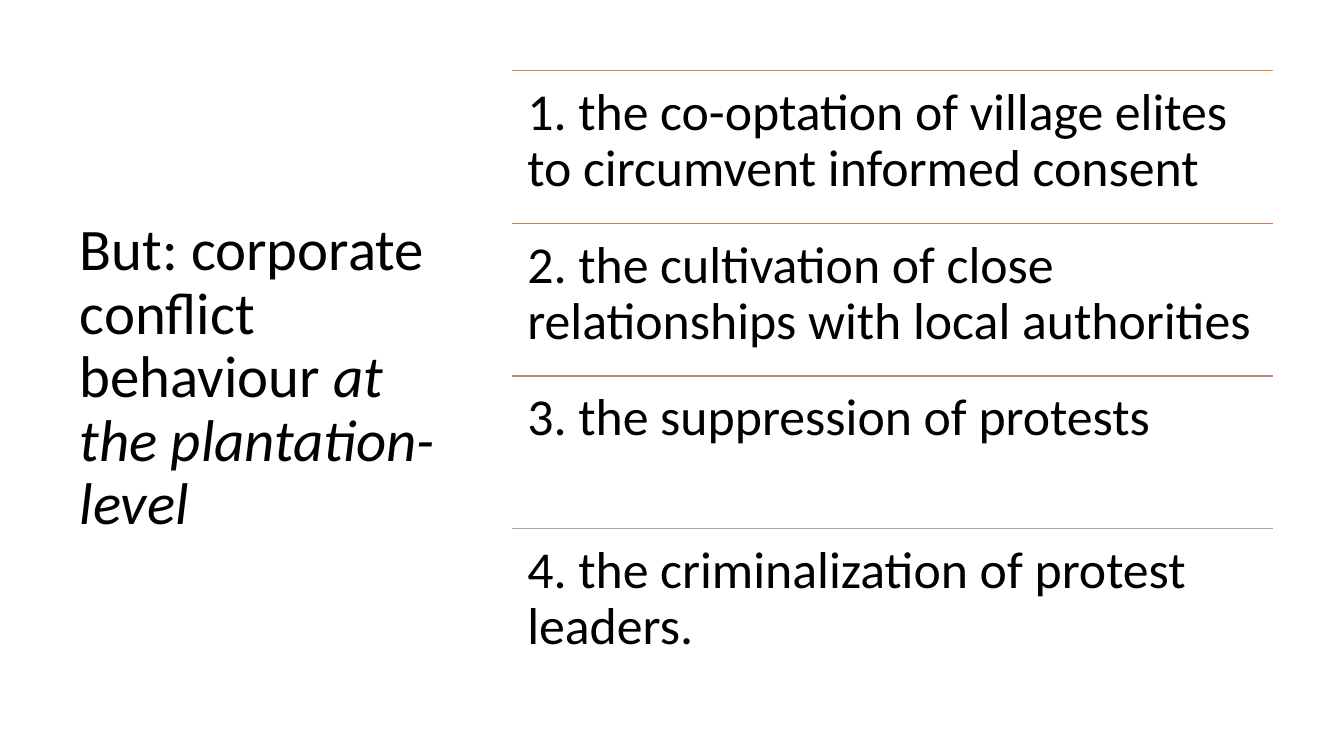
from lxml.etree import SubElement
from pptx import Presentation
from pptx.dml.color import RGBColor
from pptx.enum.shapes import MSO_CONNECTOR
from pptx.enum.text import MSO_ANCHOR, MSO_AUTO_SIZE, PP_ALIGN
from pptx.oxml.ns import qn
from pptx.util import Inches, Pt

COLORS = {
    "text": "000000",
    "orange": "ED7D31",
    "rust": "D07A5B",
    "rose": "B88881",
    "gray": "A4A4A4",
}

ITEMS = [
    ("1. the co-optation of village elites to circumvent informed consent", "orange"),
    ("2. the cultivation of close relationships with local authorities", "rust"),
    ("3. the suppression of protests", "rose"),
    ("4. the criminalization of protest leaders.", "gray"),
]


def add_run(para, text, size, color="text", font="Calibri", italic=False):
    run = para.add_run()
    run.text = text
    run.font.name = font
    run.font.size = Pt(size)
    run.font.italic = italic
    run.font.color.rgb = RGBColor.from_string(COLORS[color])


class Deck:
    """Holds the style and the current slide."""

    title_size = 42
    item_size = 37
    spacing = 0.9

    def __init__(self):
        self.prs = Presentation()
        self.prs.slide_width = Inches(13.33)
        self.prs.slide_height = Inches(7.5)
        self.slide = self.prs.slides.add_slide(self.prs.slide_layouts[5])

    def frame(self, shape, anchor, pad_x, pad_y):
        frame = shape.text_frame
        frame.word_wrap = True
        frame.auto_size = MSO_AUTO_SIZE.NONE
        frame.vertical_anchor = anchor
        frame.margin_left = frame.margin_right = Inches(pad_x)
        frame.margin_top = frame.margin_bottom = Inches(pad_y)
        para = frame.paragraphs[0]
        para.alignment = PP_ALIGN.LEFT
        para.line_spacing = self.spacing
        return para

    def title(self, plain, slanted, left, top, width, height):
        shape = self.slide.shapes.title
        shape.left, shape.top = Inches(left), Inches(top)
        shape.width, shape.height = Inches(width), Inches(height)
        para = self.frame(shape, MSO_ANCHOR.MIDDLE, 0.1, 0.05)
        add_run(para, plain, self.title_size)
        add_run(para, slanted, self.title_size, italic=True)

    def rule(self, left, top, width, color):
        line = self.slide.shapes.add_connector(
            MSO_CONNECTOR.STRAIGHT,
            Inches(left), Inches(top), Inches(left + width), Inches(top))
        line.line.color.rgb = RGBColor.from_string(COLORS[color])
        line.line.width = Pt(1)
        SubElement(line._element.spPr, qn("a:effectLst"))

    def item(self, text, left, top, width, height):
        box = self.slide.shapes.add_textbox(
            Inches(left), Inches(top), Inches(width), Inches(height))
        para = self.frame(box, MSO_ANCHOR.TOP, 0.15, 0.15)
        add_run(para, text, self.item_size)


def main():
    deck = Deck()
    top, total = 0.7, 6.06

    # Title on the left
    deck.title("But: corporate conflict behaviour ", "at the plantation-level",
               0.69, top, 3.74, 6.11)

    # Ruled list on the right, in rows of equal height
    left, width = 5.08, 7.55
    step = total / len(ITEMS)
    for row, (text, color) in enumerate(ITEMS):
        y = top + row * step
        deck.rule(left, y, width, color)
        deck.item(text, left, y, width, step)

    deck.prs.save("out.pptx")


if __name__ == "__main__":
    main()
